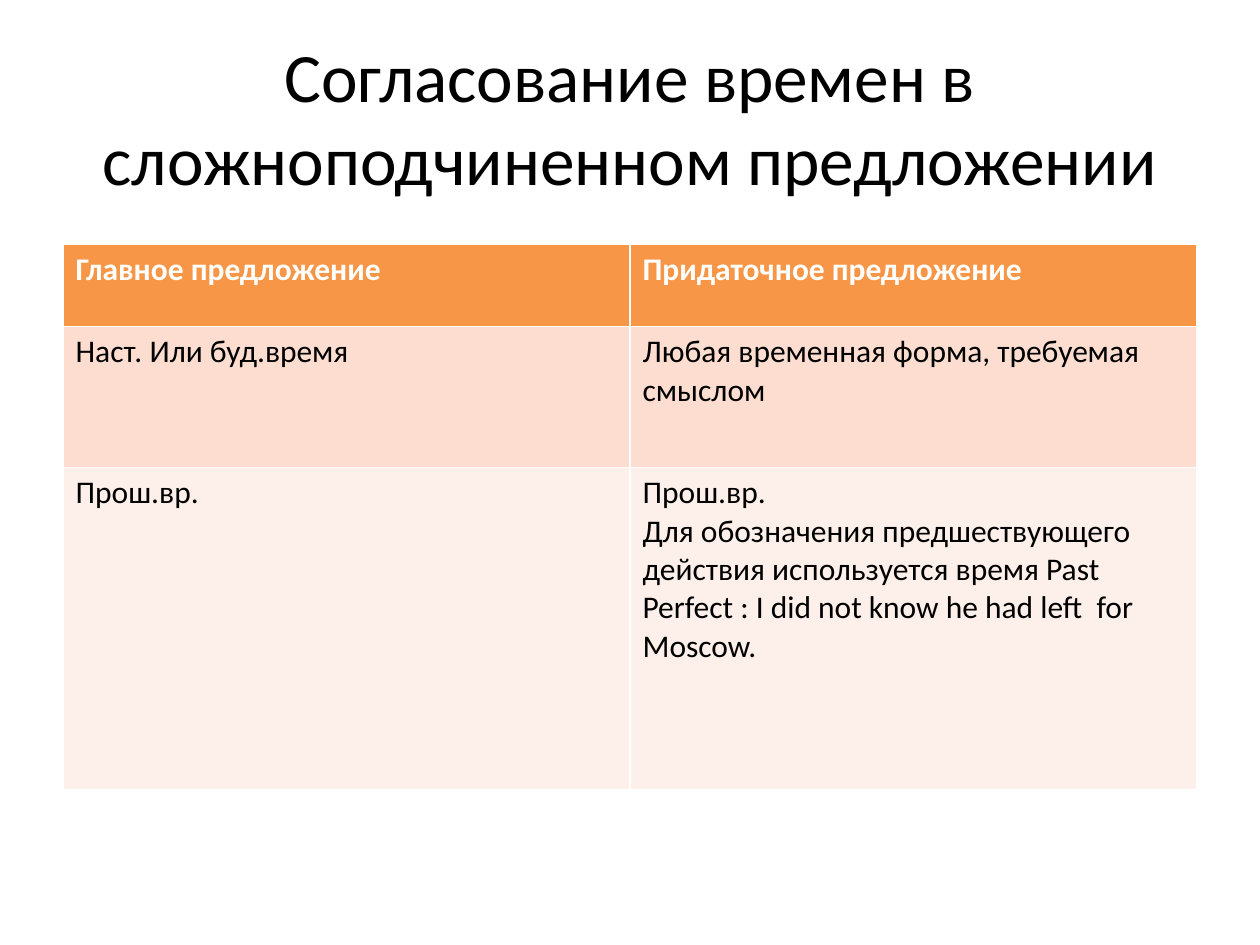
import pptx
import pptx.dml.color
import pptx.enum.text
import pptx.util
from pptx.util import Cm, Pt

COLOURS = {
    "title": "000000",
    "header text": "FFFFFF",
    "body text": "000000",
    "header": "F79646",
    "odd row": "FCDDCF",
    "even row": "FDEFE9",
}


def format_font(font, size, colour, bold=False):
    font.name = "Calibri"
    font.size = Pt(size)
    font.bold = bold
    font.color.rgb = pptx.dml.color.RGBColor.from_string(COLOURS[colour])


presentation = pptx.Presentation()
presentation.slide_width = Cm(25.4)
presentation.slide_height = Cm(19.05)
slide = presentation.slides.add_slide(presentation.slide_layouts[5])

# Title
title = slide.shapes.title
title.left, title.top, title.width, title.height = Cm(1.27), Cm(0.76), Cm(22.86), Cm(3.18)
title.text_frame.text = "Согласование времен в сложноподчиненном предложении"
title.text_frame.vertical_anchor = pptx.enum.text.MSO_ANCHOR.MIDDLE
title_paragraph = title.text_frame.paragraphs[0]
title_paragraph.alignment = pptx.enum.text.PP_ALIGN.CENTER
format_font(title_paragraph.font, 39.6, "title")

# Table: fill, text colour, height in cm, and cell texts of each row
rows = [
    ("header", "header text", 1.65, ["Главное предложение", "Придаточное предложение"]),
    ("odd row", "body text", 2.84,
     ["Наст. Или буд.время", "Любая временная форма, требуемая смыслом"]),
    ("even row", "body text", 6.5,
     ["Прош.вр.",
      "Прош.вр.\nДля обозначения предшествующего действия используется время "
      "Past Perfect : I did not know he had left  for Moscow."]),
]
# The default table style supplies the white rules between cells
table = slide.shapes.add_table(
    len(rows), 2, Cm(1.27), Cm(4.93), Cm(22.86), Cm(sum(row[2] for row in rows))
).table

for row_index, (fill, text_colour, height, texts) in enumerate(rows):
    table.rows[row_index].height = Cm(height)
    for column_index, text in enumerate(texts):
        cell = table.cell(row_index, column_index)
        cell.text = text
        cell.fill.solid()
        cell.fill.fore_color.rgb = pptx.dml.color.RGBColor.from_string(COLOURS[fill])
        for paragraph in cell.text_frame.paragraphs:
            format_font(paragraph.font, 18, text_colour, bold=fill == "header")

presentation.save("out.pptx")
